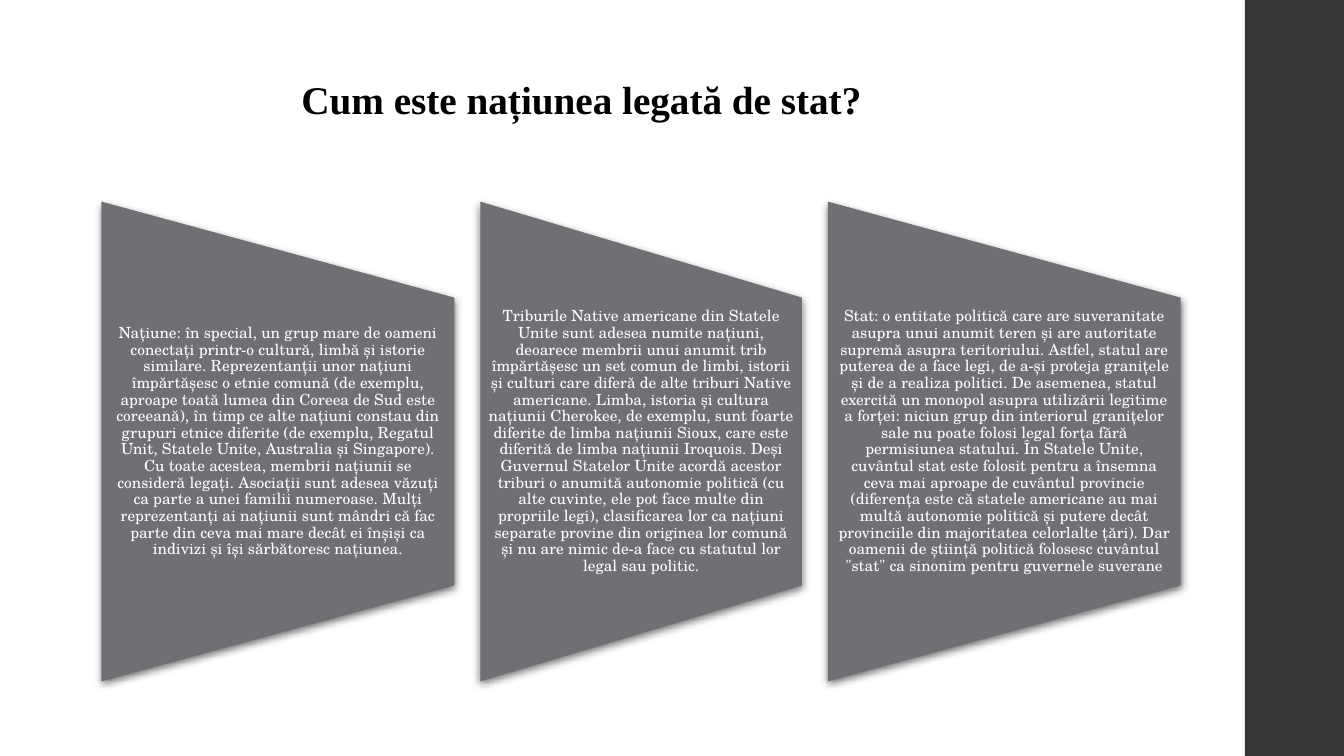
from dataclasses import dataclass
from lxml.etree import SubElement
from pptx import Presentation
from pptx.dml.color import RGBColor
from pptx.enum.shapes import MSO_SHAPE
from pptx.enum.text import MSO_ANCHOR, PP_ALIGN
from pptx.oxml.ns import qn
from pptx.util import Pt


@dataclass(frozen=True)
class Theme:
    panel: RGBColor = RGBColor(0x6F, 0x6F, 0x74)
    sidebar: RGBColor = RGBColor(0x35, 0x35, 0x37)
    title: RGBColor = RGBColor(0, 0, 0)
    body: RGBColor = RGBColor(255, 255, 255)
    shadow: str = "000000"
    title_font: str = "Times New Roman"
    body_font: str = "TeX Gyre Schola"
    title_size: int = 28
    body_size: int = 11


theme = Theme()
presentation = Presentation()
presentation.slide_width = Pt(960)
presentation.slide_height = Pt(540)
slide = presentation.slides.add_slide(presentation.slide_layouts[6])


def add_text(text, left, top, width, height, font, size, color, bold=False,
             anchor=MSO_ANCHOR.TOP, margins=(7.2, 3.6, 7.2, 3.6),
             line_spacing=1.0, space_after=0):
    box = slide.shapes.add_textbox(Pt(left), Pt(top), Pt(width), Pt(height))
    frame = box.text_frame
    frame.word_wrap = True
    frame.vertical_anchor = anchor
    frame.margin_left, frame.margin_top, frame.margin_right, frame.margin_bottom = map(Pt, margins)
    paragraph = frame.paragraphs[0]
    paragraph.alignment = PP_ALIGN.CENTER
    paragraph.line_spacing = line_spacing
    paragraph.space_after = Pt(space_after)
    run = paragraph.add_run()
    run.text = text
    run.font.name = font
    run.font.size = Pt(size)
    run.font.bold = bold
    run.font.color.rgb = color


def add_filled_shape(kind, left, top, width, height, color):
    shape = slide.shapes.add_shape(kind, Pt(left), Pt(top), Pt(width), Pt(height))
    shape.shadow.inherit = False
    shape.fill.solid()
    shape.fill.fore_color.rgb = color
    shape.line.fill.background()
    return shape


panels = [
    (252, "Națiune: în special, un grup mare de oameni conectați printr-o cultură, limbă și istorie "
          "similare. Reprezentanții unor națiuni împărtășesc o etnie comună (de exemplu, aproape toată "
          "lumea din Coreea de Sud este coreeană), în timp ce alte națiuni constau din grupuri etnice "
          "diferite (de exemplu, Regatul Unit, Statele Unite, Australia și Singapore). Cu toate acestea, "
          "membrii națiunii se consideră legați. Asociații sunt adesea văzuți ca parte a unei familii "
          "numeroase. Mulți reprezentanți ai națiunii sunt mândri că fac parte din ceva mai mare decât "
          "ei înșiși ca indivizi și își sărbătoresc națiunea."),
    (229.7, "Triburile Native americane din Statele Unite sunt adesea numite națiuni, deoarece membrii "
            "unui anumit trib împărtășesc un set comun de limbi, istorii și culturi care diferă de alte "
            "triburi Native americane. Limba, istoria și cultura națiunii Cherokee, de exemplu, sunt "
            "foarte diferite de limba națiunii Sioux, care este diferită de limba națiunii Iroquois. "
            "Deși Guvernul Statelor Unite acordă acestor triburi o anumită autonomie politică (cu alte "
            "cuvinte, ele pot face multe din propriile legi), clasificarea lor ca națiuni separate "
            "provine din originea lor comună și nu are nimic de-a face cu statutul lor legal sau politic."),
    (252, "Stat: o entitate politică care are suveranitate asupra unui anumit teren și are autoritate "
          "supremă asupra teritoriului. Astfel, statul are puterea de a face legi, de a-și proteja "
          "granițele și de a realiza politici. De asemenea, statul exercită un monopol asupra utilizării "
          "legitime a forței: niciun grup din interiorul granițelor sale nu poate folosi legal forța "
          "fără permisiunea statului. În Statele Unite, cuvântul stat este folosit pentru a însemna "
          "ceva mai aproape de cuvântul provincie (diferența este că statele americane au mai multă "
          "autonomie politică și putere decât provinciile din majoritatea celorlalte țări). Dar oamenii "
          "de știință politică folosesc cuvântul \"stat\" ca sinonim pentru guvernele suverane"),
]

add_filled_shape(MSO_SHAPE.RECTANGLE, 889.2, 0, 72, 540, theme.sidebar)

panel_left = 72.5
panel_gap = 18.6
panel_height = 342.7
text_height = 206
center_y = 315.4
for panel_width, text in panels:
    center_x = panel_left + panel_width / 2
    panel = add_filled_shape(MSO_SHAPE.FLOWCHART_MANUAL_OPERATION, center_x - panel_height / 2,
                             center_y - panel_width / 2, panel_height, panel_width, theme.panel)
    panel.rotation = 270
    effects = panel.element.spPr.find(qn("a:effectLst"))
    shadow = SubElement(effects, qn("a:outerShdw"), blurRad=str(Pt(6)), dist=str(Pt(2)),
                        dir="5400000", rotWithShape="0")
    shadow_color = SubElement(shadow, qn("a:srgbClr"), val=theme.shadow)
    SubElement(shadow_color, qn("a:alpha"), val="55000")
    add_text(text, panel_left, center_y - text_height / 2, panel_width, text_height,
             font=theme.body_font, size=theme.body_size, color=theme.body,
             anchor=MSO_ANCHOR.MIDDLE, margins=(5.5, 0, 5.3, 0),
             line_spacing=0.9, space_after=3.85)
    panel_left += panel_width + panel_gap

add_text("Cum este națiunea legată de stat? ", 116, 50.4, 605.5, 41,
         font=theme.title_font, size=theme.title_size, color=theme.title, bold=True)

presentation.save("out.pptx")
